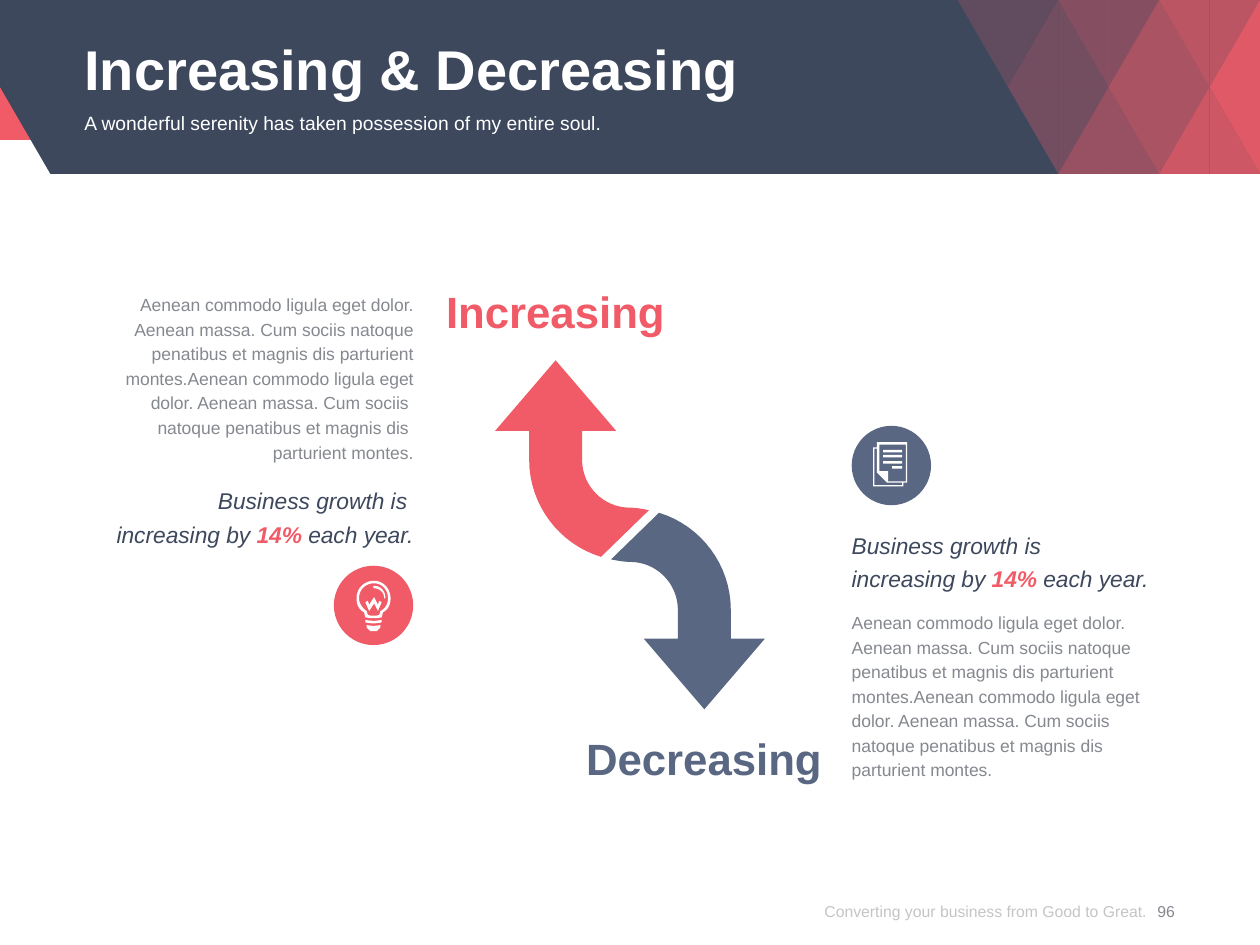
import lxml.etree
import pptx
import pptx.dml.color
import pptx.enum.shapes
import pptx.enum.text
import pptx.oxml.ns
import pptx.util

Inches = pptx.util.Inches
Pt = pptx.util.Pt
RGB = pptx.dml.color.RGBColor.from_string
Align = pptx.enum.text.PP_ALIGN
Anchor = pptx.enum.text.MSO_ANCHOR
Kind = pptx.enum.shapes.MSO_SHAPE
colors = {"red": "F15B67", "navy": "3D485D", "slate": "5A6783", "gray": "85898F",
          "pale": "C5C5C5", "white": "FFFFFF"}

deck = pptx.Presentation()
deck.slide_width, deck.slide_height = Inches(10), Inches(7.5)
slide = deck.slides.add_slide(deck.slide_layouts[5])
shapes = slide.shapes


def draw(rings, color, alpha=100):
    """Fill closed rings; a 2-tuple is a line end, a 6-tuple a cubic curve."""
    pen = None
    for ring in rings:
        x, y = ring[0]
        if pen is None:
            pen = shapes.build_freeform(Inches(x), Inches(y))
        else:
            pen.move_to(Inches(x), Inches(y))
        dots = []
        for step in ring[1:]:
            if len(step) == 2:
                dots.append(step)
            else:
                a, b, c, d, e, f = step
                for t in [n / 16 for n in range(1, 17)]:
                    u = 1 - t
                    dots.append((u**3 * x + 3*u*u*t * a + 3*u*t*t * c + t**3 * e,
                                 u**3 * y + 3*u*u*t * b + 3*u*t*t * d + t**3 * f))
            x, y = dots[-1]
        pen.add_line_segments([(Inches(p), Inches(q)) for p, q in dots], close=True)
    shape = pen.convert_to_shape()
    shape.shadow.inherit = False
    shape.fill.solid()
    shape.fill.fore_color.rgb = RGB(colors[color])
    shape.line.fill.background()
    if alpha < 100:
        tint = shape.element.find(".//" + pptx.oxml.ns.qn("a:srgbClr"))
        lxml.etree.SubElement(tint, pptx.oxml.ns.qn("a:alpha"), val=str(alpha * 1000))


def write(box, at, lines, size, color, align=Align.LEFT, gap=None,
          bold=False, italic=False, anchor=Anchor.TOP):
    box.left, box.top, box.width, box.height = [Inches(v) for v in at]
    frame = box.text_frame
    frame.word_wrap = True
    frame.vertical_anchor = anchor
    frame.margin_left = frame.margin_right = frame.margin_top = frame.margin_bottom = 0
    for n, parts in enumerate(lines):
        para = frame.add_paragraph() if n else frame.paragraphs[0]
        para.text = parts[0]
        para.alignment = align
        if gap:
            para.line_spacing = Pt(gap)
        for part in parts[1:]:
            para.add_run().text = part
        for run in para.runs:
            key = run.text == "14%"
            run.font.name = "Arial"
            run.font.size = Pt(size)
            run.font.bold = bold or key
            run.font.italic = italic
            run.font.color.rgb = RGB(colors["red" if key else color])


draw([[(0, 0), (10, 0), (10, 1.11), (0, 1.11)]], "red")
draw([[(0, 0), (10, 0), (10, 1.38), (0.4, 1.38), (0, 0.69)]], "navy")

top, mid, low = 0, 0.69, 1.38
facets = [(8, top, mid, 20), (8.4, mid, top, 30), (8.4, mid, low, 30),
          (8.8, top, mid, 40), (8.8, low, mid, 50), (9.2, mid, top, 60),
          (9.2, mid, low, 60), (9.6, top, mid, 70), (9.6, low, mid, 80),
          (10, mid, top, 90), (10, mid, low, 90)]
for x, base, tip, alpha in facets:
    for side in (x - 0.4, x + 0.4):
        if side < 10.1:
            draw([[(x, base), (side, base), (x, tip)]], "red", alpha)

title = shapes.title
shapes.element.append(title.element)
write(title, (0.67, 0.19, 8.66, 0.65), [["Increasing & Decreasing"]], 32, "white",
      gap=42, bold=True, anchor=Anchor.MIDDLE)

arrow = [(5.15, 4.05), (4.77, 4.42), (4.44, 4.32, 4.2, 4.01, 4.2, 3.65), (4.2, 3.42),
         (3.93, 3.42), (4.41, 2.86), (4.89, 3.42), (4.62, 3.42), (4.62, 3.65),
         (4.62, 3.86, 4.79, 4.03, 5, 4.03), (5.05, 4.03, 5.1, 4.04, 5.15, 4.05)]
turned = [tuple((8.49 if n % 2 else 10) - v for n, v in enumerate(step)) for step in arrow]
draw([arrow], "red")
draw([turned], "slate")

for x, y, color in [(2.65, 4.49, "red"), (6.76, 3.38, "slate")]:
    disc = shapes.add_shape(Kind.OVAL, Inches(x), Inches(y), Inches(0.63), Inches(0.63))
    disc.shadow.inherit = False
    disc.fill.solid()
    disc.fill.fore_color.rgb = RGB(colors[color])
    disc.line.fill.background()

bulb = [
    [(2.91, 4.96), (2.91, 4.98), (2.93, 5), (2.94, 5.01), (2.99, 5.01), (3, 5),
     (3.02, 4.98), (3.02, 4.96), (2.99, 4.97, 2.94, 4.97, 2.91, 4.96)],
    [(2.9, 4.92), (2.9, 4.94), (2.94, 4.95, 2.99, 4.95, 3.03, 4.94), (3.03, 4.92),
     (2.99, 4.93, 2.94, 4.93, 2.9, 4.92)],
    [(2.97, 4.61), (2.89, 4.61, 2.83, 4.67, 2.83, 4.75), (2.83, 4.8, 2.85, 4.84, 2.89, 4.86),
     (2.9, 4.9), (2.94, 4.91, 2.99, 4.91, 3.03, 4.9), (3.04, 4.86),
     (3.08, 4.84, 3.1, 4.8, 3.1, 4.75), (3.1, 4.67, 3.04, 4.61, 2.97, 4.61)],
    [(3.02, 4.85), (3.01, 4.88), (2.99, 4.89, 2.94, 4.89, 2.92, 4.88), (2.91, 4.85),
     (2.88, 4.83, 2.85, 4.79, 2.85, 4.75), (2.85, 4.68, 2.9, 4.63, 2.97, 4.63),
     (3.03, 4.63, 3.08, 4.68, 3.08, 4.75), (3.08, 4.79, 3.06, 4.83, 3.02, 4.85)],
    [(3, 4.8), (2.97, 4.74), (2.93, 4.8), (2.92, 4.77), (2.9, 4.78), (2.93, 4.85),
     (2.97, 4.79), (3, 4.85), (3.03, 4.78), (3.01, 4.77)],
    [(2.97, 4.65), (2.96, 4.66), (2.97, 4.67), (3.01, 4.67, 3.05, 4.7, 3.05, 4.75),
     (3.06, 4.75), (3.06, 4.69, 3.02, 4.65, 2.97, 4.65)]]
draw(bulb, "white")

pages = [
    [(6.96, 3.51), (6.96, 3.55), (6.93, 3.55), (6.93, 3.86), (7.17, 3.86), (7.17, 3.83),
     (7.2, 3.83), (7.2, 3.51)],
    [(7.16, 3.85), (6.94, 3.85), (6.94, 3.56), (6.96, 3.56), (6.96, 3.75), (7.04, 3.83),
     (7.16, 3.83)],
    [(7.19, 3.82), (7.05, 3.82), (7.05, 3.74), (6.98, 3.74), (6.98, 3.53), (7.19, 3.53)]]
for x, y in [(7.01, 3.57), (7.01, 3.61), (7.01, 3.66), (7.08, 3.7)]:
    pages.append([(x, y), (7.16, y), (7.16, y + 0.02), (x, y + 0.02)])
draw(pages, "white")

story = [["Aenean commodo ligula eget dolor. Aenean massa. Cum sociis natoque penatibus et "
          "magnis dis parturient montes.Aenean commodo ligula eget dolor. Aenean massa. "
          "Cum sociis \vnatoque penatibus et magnis dis \vparturient montes."]]
growth = ["increasing by ", "14%", " each year."]
sides = [(0.67, 2.31, 3.82, "Business growth is ", Align.RIGHT),
         (6.76, 4.83, 4.17, "Business growth is", Align.LEFT)]
for x, y, z, lead, align in sides:
    write(shapes.add_textbox(0, 0, 0, 0), (x, y, 2.61, 1.37), story, 10, "gray", align, 14)
    write(shapes.add_textbox(0, 0, 0, 0), (x, z, 2.61, 0.53), [[lead], growth], 13, "navy",
          align, 19, italic=True)

heads = [(3.54, 2.26, "Increasing", "red", Align.LEFT),
         (3.91, 5.81, "Decreasing", "slate", Align.RIGHT)]
for x, y, word, color, align in heads:
    write(shapes.add_textbox(0, 0, 0, 0), (x, y, 2.61, 0.42), [[word]], 25, color, align,
          bold=True)

write(shapes.add_textbox(0, 0, 0, 0), (0.67, 0.88, 8.66, 0.39),
      [["A wonderful serenity has taken possession of my entire soul."]], 11, "white")
write(shapes.add_textbox(0, 0, 0, 0), (6.04, 6.96, 3.06, 0.54),
      [["Converting your business from Good to Great."]], 9, "pale", Align.RIGHT,
      anchor=Anchor.MIDDLE)
write(shapes.add_textbox(0, 0, 0, 0), (9.02, 6.96, 0.47, 0.54), [["96"]], 9, "gray",
      Align.CENTER, anchor=Anchor.MIDDLE)

deck.save("out.pptx")
